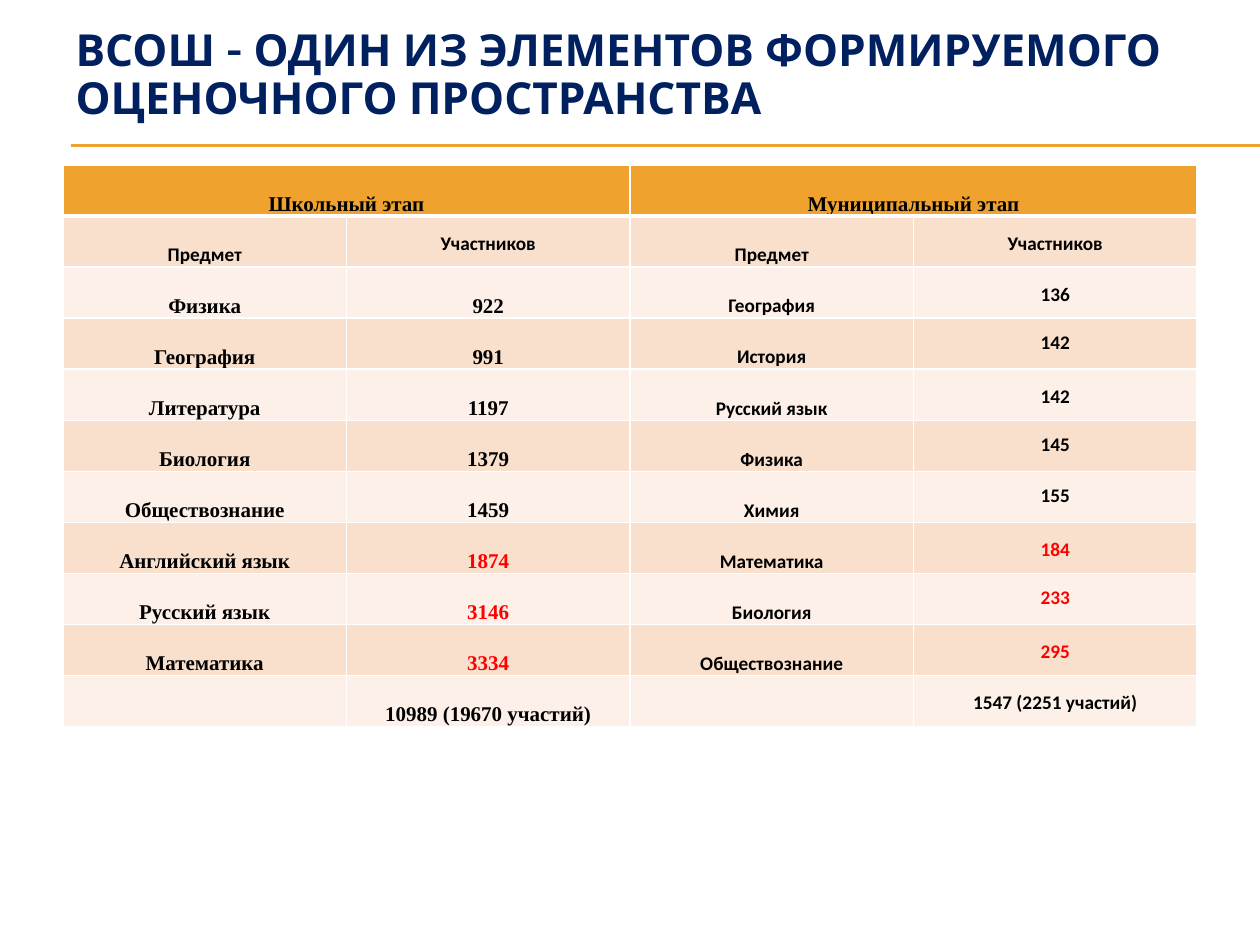
from pptx import Presentation
from pptx.dml.color import RGBColor
from pptx.enum.shapes import MSO_CONNECTOR
from pptx.enum.text import MSO_ANCHOR as Anchor, MSO_AUTO_SIZE as AutoSize, PP_ALIGN as Align
from pptx.oxml.ns import qn
from pptx.util import Inches, Pt
from lxml.etree import SubElement

COLORS = {
    "accent": "F0A22E",
    "title": "002060",
    "text": "000000",
    "highlight": "FF0000",
    "border": "FFFFFF",
    "band_dark": "F9E0CD",
    "band_light": "FCF0E8",
}
TITLE = "ВСОШ - ОДИН ИЗ ЭЛЕМЕНТОВ ФОРМИРУЕМОГО ОЦЕНОЧНОГО ПРОСТРАНСТВА"
STAGES = ["Школьный этап", "Муниципальный этап"]
ROWS = [
    ["Предмет", "Участников", "Предмет", "Участников"],
    ["Физика", "922", "География", "136"],
    ["География", "991", "История", "142"],
    ["Литература", "1197", "Русский язык", "142"],
    ["Биология", "1379", "Физика", "145"],
    ["Обществознание", "1459", "Химия", "155"],
    ["Английский язык", "1874", "Математика", "184"],
    ["Русский язык", "3146", "Биология", "233"],
    ["Математика", "3334", "Обществознание", "295"],
    ["", "10989 (19670 участий)", "", "1547 (2251 участий)"],
]
HIGHLIGHTED = {"1874", "3146", "3334", "184", "233", "295"}
# Subjects of the municipal stage whose rows use exact line spacing
TIGHT_SUBJECTS = {"История", "Физика", "Химия", "Биология"}
SERIF = ("Times New Roman", 12)
SANS = ("Calibri", 11)


def rgb(name):
    return RGBColor.from_string(COLORS[name])


def style_runs(paragraph, font_name, size, color):
    for run in paragraph.runs:
        font = run.font
        font.name, font.size, font.bold = font_name, Pt(size), True
        font.color.rgb = rgb(color)


def add_title(slide):
    title = slide.shapes.title
    title.left, title.top = Inches(0.5), Inches(0.3)
    title.width, title.height = Inches(9.3), Inches(0.61)
    frame = title.text_frame
    frame.text = TITLE
    frame.word_wrap = True
    frame.auto_size = AutoSize.NONE
    frame.vertical_anchor = Anchor.MIDDLE
    heading = frame.paragraphs[0]
    heading.alignment = Align.LEFT
    heading.line_spacing = 0.9
    style_runs(heading, "Karla", 25.2, "title")


def add_rule(slide, y):
    rule = slide.shapes.add_connector(
        MSO_CONNECTOR.STRAIGHT, Inches(0.56), Inches(y), Inches(10), Inches(y))
    rule.line.color.rgb = rgb("accent")
    rule.line.width = Pt(0.75)
    SubElement(rule._element.spPr, qn("a:effectLst"))


def set_borders(cell, bottom=1):
    properties = cell._tc.get_or_add_tcPr()
    for side, width in (("L", 1), ("R", 1), ("T", 1), ("B", bottom)):
        line = SubElement(properties, qn(f"a:ln{side}"), w=str(Pt(width)))
        fill = SubElement(line, qn("a:solidFill"))
        SubElement(fill, qn("a:srgbClr"), val=COLORS["border"])


def fill_cell(cell, text, fill, font, anchor=Anchor.BOTTOM, spacing=1.15, bottom=1):
    set_borders(cell, bottom)
    cell.fill.solid()
    cell.fill.fore_color.rgb = rgb(fill)
    cell.margin_left = cell.margin_right = Inches(0.07)
    cell.margin_top = cell.margin_bottom = 0
    cell.vertical_anchor = anchor
    cell.text_frame.text = text
    paragraph = cell.text_frame.paragraphs[0]
    paragraph.alignment = Align.CENTER
    paragraph.line_spacing = spacing
    style_runs(paragraph, *font, "highlight" if text in HIGHLIGHTED else "text")


def add_results_table(slide):
    table = slide.shapes.add_table(
        len(ROWS) + 1, 4, Inches(0.5), Inches(1.31), Inches(9), Inches(4.46)).table

    for index, stage in enumerate(STAGES):
        first, second = table.cell(0, 2 * index), table.cell(0, 2 * index + 1)
        first.merge(second)
        fill_cell(first, stage, "accent", SERIF, bottom=3)
        set_borders(second, bottom=3)

    for row, values in enumerate(ROWS, start=1):
        band = "band_dark" if row % 2 else "band_light"
        tight = values[2] in TIGHT_SUBJECTS
        for column, value in enumerate(values):
            municipal = column >= 2
            subheading = row == 1
            centered = column == 3 or (subheading and column == 1)
            fill_cell(
                table.cell(row, column), value, band,
                SANS if municipal or subheading else SERIF,
                Anchor.MIDDLE if centered else Anchor.BOTTOM,
                Pt(12.6) if municipal and tight else 1.15)


def main():
    deck = Presentation()
    deck.slide_width, deck.slide_height = Inches(10), Inches(7.5)
    slide = deck.slides.add_slide(deck.slide_layouts[5])
    for y in (1.15, 1.16):
        add_rule(slide, y)
    add_title(slide)
    add_results_table(slide)
    deck.save("out.pptx")


if __name__ == "__main__":
    main()
